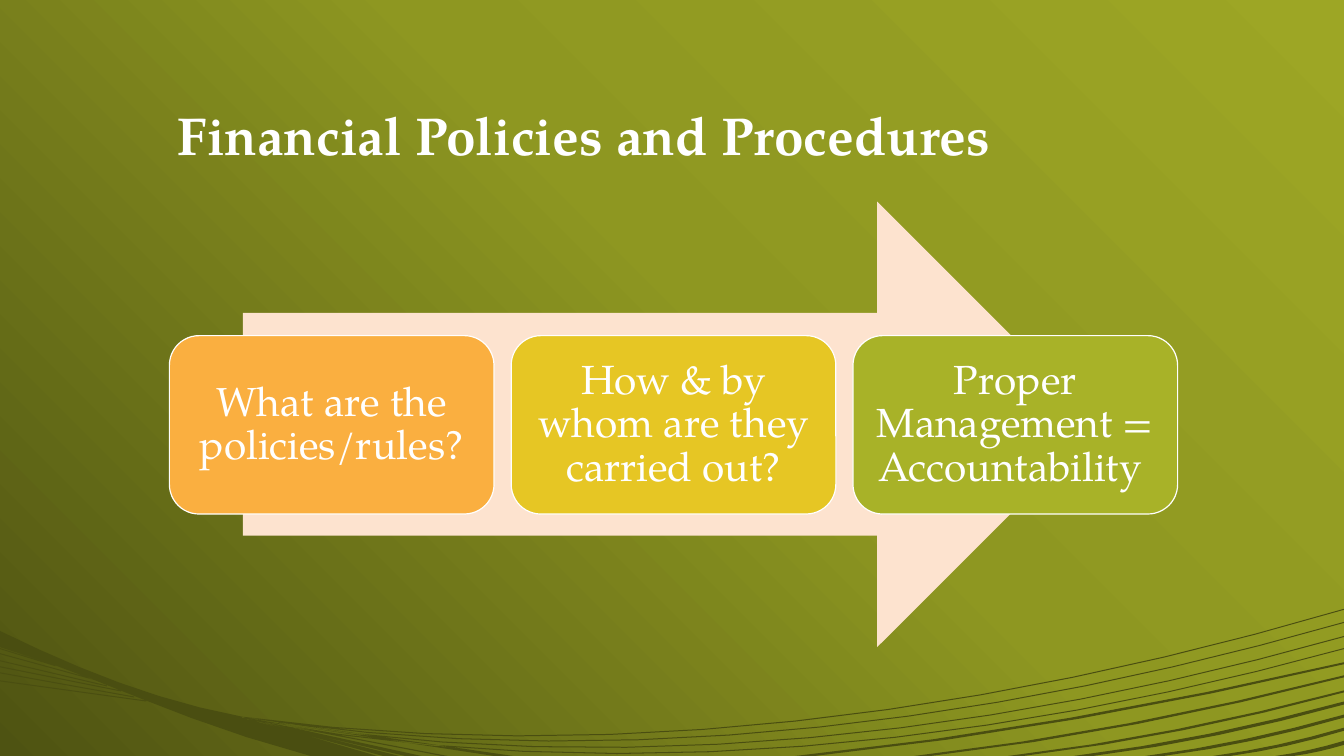
from lxml.etree import fromstring
from pptx import Presentation
from pptx.dml.color import RGBColor
from pptx.enum.shapes import MSO_SHAPE
from pptx.enum.text import MSO_ANCHOR, PP_ALIGN
from pptx.util import Inches, Pt

FONT = "TeX Gyre Pagella"
COLORS = {
    "light": "9DA625", "mid": "8E9721", "dark": "4E5312", "wave": "4A4E11",
    "white": "FFFFFF", "arrow": "FDE3CF",
    "orange": "FAAF40", "yellow": "E6C624", "green": "A8B228",
}
STEPS = [
    ("What are the policies/rules?", "orange"),
    ("How & by whom are they carried out?", "yellow"),
    ("Proper Management = Accountability ", "green"),
]
WIDE, HIGH = 13.33, 7.5

# Right edge height, thickness, and the two ends on the bottom edge
SHORT = [
    (7.35, 0.04, 12.65, 12.83), (7.22, 0.03, 12.03, 12.2),
    (7.09, 0.03, 11.36, 11.54), (6.96, 0.03, 10.65, 10.84),
    (6.85, 0.02, 10, 10.15), (6.7, 0.02, 9.07, 9.23),
    (6.57, 0.02, 7.89, 8.08),
]
# Bezier points of the strands that sweep across the slide
LONG = [
    [(2.4, 7.11), (6, 7.6), (9.8, 7.08), (WIDE, 6.04)],
    [(2.76, 7.16), (6.31, 7.65), (9.99, 7.13), (WIDE, 6.17)],
    [(2.58, 7.14), (6.18, 7.75), (9.93, 7.27), (WIDE, 6.31)],
    [(2.45, 7.13), (6.08, 7.83), (9.89, 7.38), (WIDE, 6.43)],
]
# Bottom ends of the strands that fan out below the sweep
FAN = [(4.9, 5.09), (4.38, 4.44), (4.02, 4.18), (3.8, 3.96)]
# Left edge height and the point where each strand meets the stem
LEFT = [
    (6.75, 1.45, 6.95), (6.67, 1.33, 6.91), (6.61, 1.2, 6.85),
    (6.55, 1.06, 6.8), (6.48, 0.91, 6.73), (6.43, 0.55, 6.6),
]


def color(name):
    return RGBColor.from_string(COLORS[name])


def paint(shape, fill, line=None):
    shape.shadow.inherit = False
    shape.fill.solid()
    shape.fill.fore_color.rgb = color(fill)
    if line:
        shape.line.color.rgb = color(line)
        shape.line.width = Pt(0.85)
    else:
        shape.line.fill.background()


def write(frame, text, size, align, bold=False):
    frame.text = text
    frame.word_wrap = True
    para = frame.paragraphs[0]
    para.alignment = align
    para.line_spacing = 0.9
    para.font.name = FONT
    para.font.size = Pt(size)
    para.font.bold = bold
    para.font.color.rgb = color("white")


def set_back(slide):
    """Fill the background with a gradient from top right to bottom left."""
    stops = "".join(
        f'<a:gs pos="{pos * 1000}"><a:srgbClr val="{COLORS[name]}"/></a:gs>'
        for pos, name in [(0, "light"), (45, "mid"), (100, "dark")])
    grad = fromstring(
        '<a:gradFill xmlns:a="http://schemas.openxmlformats.org/drawingml/2006/main"'
        f' rotWithShape="1"><a:gsLst>{stops}</a:gsLst>'
        '<a:lin ang="8100000" scaled="0"/></a:gradFill>')
    fill = slide.background.fill
    fill.solid()
    props = slide.background._cSld.bg.bgPr
    props.replace(props[0], grad)


def curve(points, count):
    """Sample a cubic Bezier curve."""
    line = []
    for step in range(count + 1):
        t = step / count
        u = 1 - t
        parts = (u ** 3, 3 * u * u * t, 3 * u * t * t, t ** 3)
        line.append(tuple(
            sum(part * point[axis] for part, point in zip(parts, points))
            for axis in (0, 1)))
    return line


def sag(x1, y1, x2, y2):
    """Curve between two points, steeper at its start."""
    dx, dy = x2 - x1, y2 - y1
    return curve([(x1, y1), (x1 + dx / 3, y1 + 0.45 * dy),
                  (x1 + dx * 2 / 3, y1 + 0.8 * dy), (x2, y2)], 4)


def drop(line, depth=0.01):
    return [(x, y + depth) for x, y in line]


def list_bands():
    """Pairs of upper and lower edges, each pair running the same way."""
    stem = curve([(0, 6.26), (0.8, 6.65), (1.55, 6.95), (2.4, 7.11)], 6)
    bands = [(stem + [(3.74, HIGH)],
              curve([(0, 6.42), (1.05, 6.73), (1.7, 7.13), (3.08, HIGH)], 6))]
    for y, thick, x1, x2 in SHORT:
        bands.append((sag(WIDE, y, x1, HIGH), sag(WIDE, y + thick, x2, HIGH)))
    for points in LONG:
        line = curve(points, 12)
        bands.append((line, drop(line)))
    for x1, x2 in FAN:
        bands.append(([(2.4, 7.11), (x2, HIGH)], [(2.4, 7.12), (x1, HIGH)]))
    for y, x2, y2 in LEFT:
        line = [(0, y), (x2, y2)]
        bands.append((line, drop(line)))
    return bands


def add_waves(slide):
    form = None
    for upper, lower in list_bands():
        points = [(Inches(x), Inches(y)) for x, y in upper + lower[::-1]]
        if form is None:
            form = slide.shapes.build_freeform(*points[0])
        else:
            form.move_to(*points[0])
        form.add_line_segments(points[1:], close=True)
    paint(form.convert_to_shape(), "wave")


def add_title(slide, text):
    title = slide.shapes.title
    title.left, title.top = Inches(1.66), Inches(0.44)
    title.width, title.height = Inches(10), Inches(1.27)
    write(title.text_frame, text, 38, PP_ALIGN.LEFT, bold=True)
    title.text_frame.vertical_anchor = MSO_ANCHOR.BOTTOM


def add_arrow(slide):
    arrow = slide.shapes.add_shape(
        MSO_SHAPE.RIGHT_ARROW, Inches(2.41), Inches(2), Inches(8.5), Inches(4.42))
    paint(arrow, "arrow")


def add_step(slide, left, text, fill):
    box = slide.shapes.add_shape(
        MSO_SHAPE.ROUNDED_RECTANGLE, Inches(left), Inches(3.33),
        Inches(3.22), Inches(1.77))
    paint(box, fill, "white")
    frame = box.text_frame
    frame.margin_left = frame.margin_right = Inches(0.12)
    frame.margin_top = frame.margin_bottom = Inches(0.12)
    frame.vertical_anchor = MSO_ANCHOR.MIDDLE
    write(frame, text, 29, PP_ALIGN.CENTER)


def main():
    deck = Presentation()
    deck.slide_width, deck.slide_height = Inches(WIDE), Inches(HIGH)
    slide = deck.slides.add_slide(deck.slide_layouts[5])
    set_back(slide)
    add_waves(slide)
    add_title(slide, "Financial Policies and Procedures")
    add_arrow(slide)
    for index, (text, fill) in enumerate(STEPS):
        add_step(slide, 1.68 + 3.39 * index, text, fill)
    deck.save("out.pptx")


if __name__ == "__main__":
    main()
